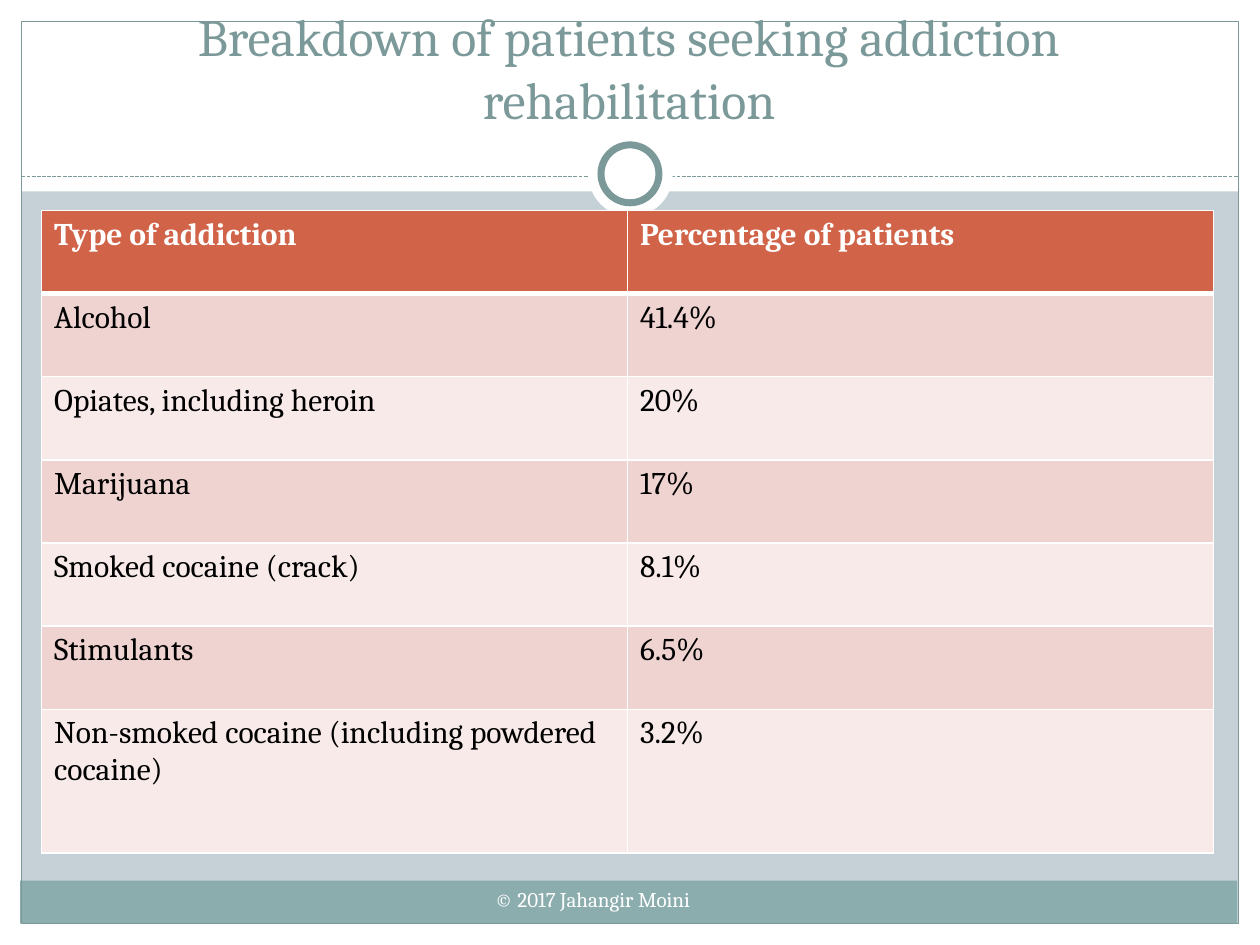
"""Build a slide with a table of addiction types among rehabilitation patients."""
import pptx
import pptx.dml.color
import pptx.enum.dml
import pptx.enum.shapes
import pptx.enum.text
import pptx.oxml
import pptx.oxml.ns
import pptx.util
from pptx.util import Inches

COLORS = {
    "background": "C5D1D7", "white": "FFFFFF", "black": "000000",
    "frame": "7C999A", "footer": "8CADAE",
    "header": "D16349", "odd": "EED3D0", "even": "F7EAE9",
}
FONT = "Cambria"
ROWS = [
    ("Type of addiction", "Percentage of patients"),
    ("Alcohol", "41.4%"),
    ("Opiates, including heroin", "20%"),
    ("Marijuana", "17%"),
    ("Smoked cocaine (crack)", "8.1%"),
    ("Stimulants", "6.5%"),
    ("Non-smoked cocaine (including powdered cocaine)", "3.2%"),
]


def rgb(name):
    return pptx.dml.color.RGBColor.from_string(COLORS[name])


def set_text(tf, text, size, color, bold=False):
    tf.text = text
    tf.word_wrap = True
    p = tf.paragraphs[0]
    p.font.name = FONT
    p.font.size = pptx.util.Pt(size)
    p.font.bold = bold
    p.font.color.rgb = rgb(color)
    return p


def add_shape(s, box, fill=None, line=None, width=0.75, kind="RECTANGLE"):
    preset = getattr(pptx.enum.shapes.MSO_SHAPE, kind)
    sp = s.shapes.add_shape(preset, *map(Inches, box))
    sp.shadow.inherit = False
    if fill:
        sp.fill.solid()
        sp.fill.fore_color.rgb = rgb(fill)
    else:
        sp.fill.background()
    if line:
        sp.line.color.rgb = rgb(line)
        sp.line.width = pptx.util.Pt(width)
    else:
        sp.line.fill.background()


def add_dashed_line(s, x1, x2, y):
    line = s.shapes.add_connector(
        pptx.enum.shapes.MSO_CONNECTOR.STRAIGHT,
        Inches(x1), Inches(y), Inches(x2), Inches(y))
    line.line.color.rgb = rgb("frame")
    line.line.width = pptx.util.Pt(0.75)
    line.line.dash_style = pptx.enum.dml.MSO_LINE.SQUARE_DOT
    sp_pr = line._element.spPr
    sp_pr.append(pptx.oxml.parse_xml(
        f'<a:effectLst {pptx.oxml.ns.nsdecls("a")}/>'))


def add_frame(s):
    for box in ((0, 7.33, 10, 0.17), (0, 0, 10, 1.52),
                (0, 0, 0.17, 7.5), (9.83, 0, 0.17, 7.5)):
        add_shape(s, box, "white")
    add_shape(s, (0.16, 6.99, 9.66, 0.34), "footer")
    add_shape(s, (0.17, 0.17, 9.66, 7.16), line="frame")
    add_dashed_line(s, 0.17, 9.83, 1.4)
    add_shape(s, (4.67, 1.05, 0.67, 0.67), "white", kind="OVAL")
    add_shape(s, (4.77, 1.15, 0.46, 0.46), "white", "frame", 4, "OVAL")


def add_footer(s):
    tb = s.shapes.add_textbox(*map(Inches, (3.83, 6.99, 2.35, 0.4)))
    set_text(tb.text_frame, "© 2017 Jahangir Moini", 12, "white")


def place_title(s, text):
    title = s.shapes.title
    title.left, title.top, title.width, title.height = map(
        Inches, (0.33, 0.25, 9.33, 0.83))
    tf = title.text_frame
    p = set_text(tf, text, 29.7, "frame")
    p.alignment = pptx.enum.text.PP_ALIGN.CENTER
    tf.vertical_anchor = pptx.enum.text.MSO_ANCHOR.BOTTOM
    tf.auto_size = pptx.enum.text.MSO_AUTO_SIZE.NONE
    s.shapes._spTree.append(title._element)


def set_borders(cell, widths):
    tc_pr = cell._tc.get_or_add_tcPr()
    for side, width in widths.items():
        tc_pr.append(pptx.oxml.parse_xml(
            f'<a:ln{side} {pptx.oxml.ns.nsdecls("a")} w="{pptx.util.Pt(width)}">'
            f'<a:solidFill><a:srgbClr val="{COLORS["white"]}"/></a:solidFill>'
            f'</a:ln{side}>'))


def add_table(s):
    table = s.shapes.add_table(
        len(ROWS), 2, *map(Inches, (0.33, 1.67, 9.3, 5.1))).table
    for i, texts in enumerate(ROWS):
        last = i == len(ROWS) - 1
        table.rows[i].height = Inches(1.14 if last else 0.66)
        fill = "header" if i == 0 else ("even", "odd")[i % 2]
        for j, text in enumerate(texts):
            cell = table.cell(i, j)
            set_borders(cell, {"L": 1, "R": 1, "T": 3 if i == 1 else 1,
                               "B": 3 if i == 0 else 1})
            cell.fill.solid()
            cell.fill.fore_color.rgb = rgb(fill)
            set_text(cell.text_frame, text, 18,
                     "black" if i else "white", bold=i == 0)


def main():
    prs = pptx.Presentation()
    prs.slide_width, prs.slide_height = Inches(10), Inches(7.5)
    s = prs.slides.add_slide(prs.slide_layouts[5])
    s.background.fill.solid()
    s.background.fill.fore_color.rgb = rgb("background")
    add_frame(s)
    add_footer(s)
    place_title(s, "Breakdown of patients seeking addiction rehabilitation")
    add_table(s)
    prs.save("out.pptx")


if __name__ == "__main__":
    main()
